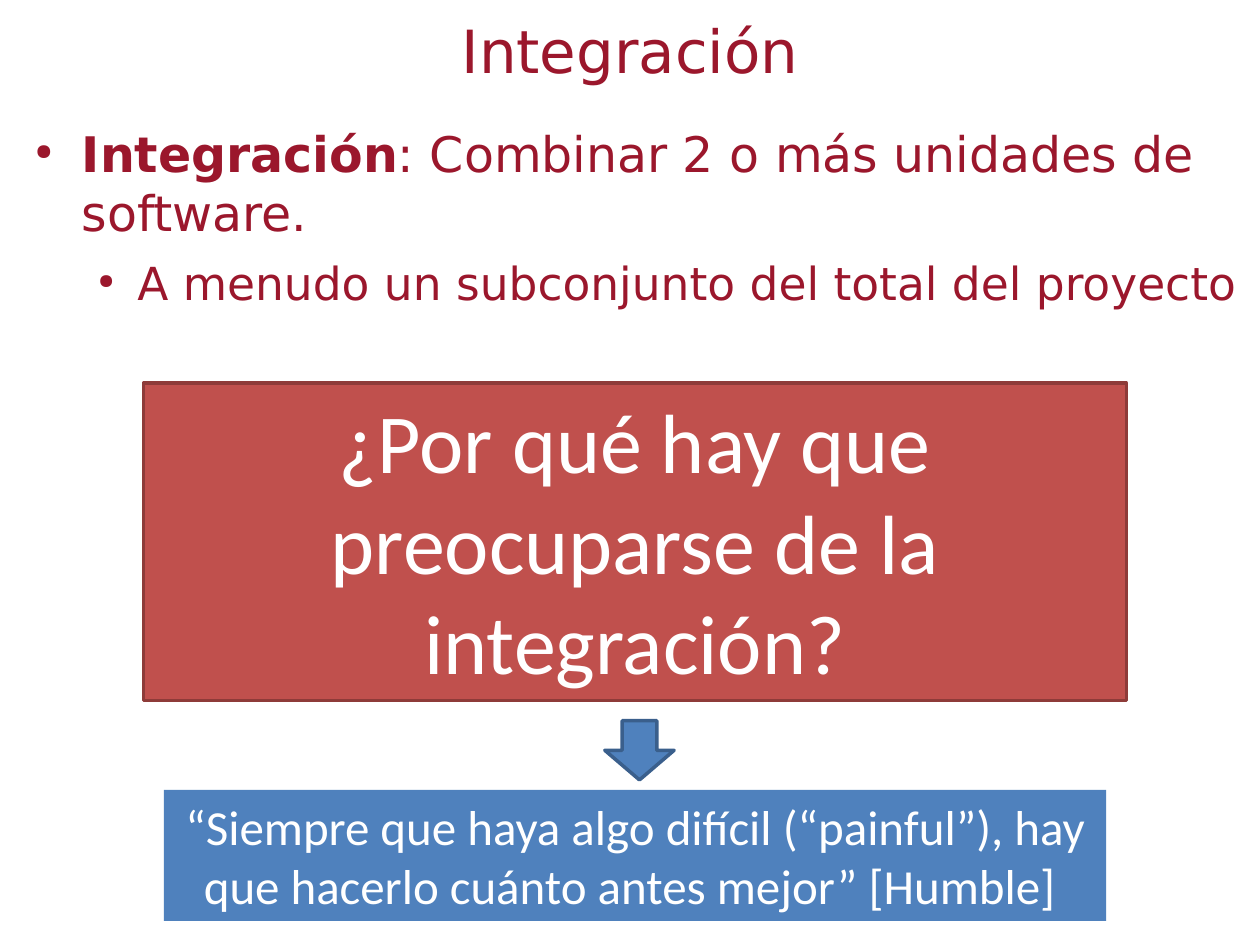
import pptx
import pptx.dml.color
import pptx.enum.shapes
import pptx.enum.text
import pptx.oxml.ns
import pptx.util
from lxml import etree
from pptx.util import Inches

COLORS = {"wine": "9B172C", "red": "C0504D", "dark_red": "8E3B39",
          "blue": "4F81BD", "dark_blue": "3A5F8C", "white": "FFFFFF"}
SHAPES = pptx.enum.shapes.MSO_SHAPE
ANCHORS = pptx.enum.text.MSO_ANCHOR
CENTER = pptx.enum.text.PP_ALIGN.CENTER


def rgb(name):
    """Return the named colour."""
    return pptx.dml.color.RGBColor.from_string(COLORS[name])


def add_run(paragraph, text, size, font, color, bold=False):
    """Append one formatted run to a paragraph."""
    run = paragraph.add_run()
    run.text = text
    run.font.size = pptx.util.Pt(size)
    run.font.name = font
    run.font.bold = bold
    run.font.color.rgb = rgb(color)


def add_text_area(slide, box, anchor):
    """Add a wrapping text box without insets and return its frame."""
    frame = slide.shapes.add_textbox(*map(Inches, box)).text_frame
    frame.word_wrap = True
    frame.vertical_anchor = anchor
    frame.margin_left = frame.margin_right = 0
    frame.margin_top = frame.margin_bottom = 0
    return frame


def format_bullet(paragraph, level, margin, hanging):
    """Give a paragraph a small wine bullet with a hanging indent."""
    paragraph.level = level
    paragraph.space_before = paragraph.space_after = pptx.util.Pt(4)
    properties = paragraph._p.get_or_add_pPr()
    properties.set("marL", str(Inches(margin)))
    properties.set("indent", str(-Inches(hanging)))
    qn = pptx.oxml.ns.qn
    bullet_color = etree.SubElement(properties, qn("a:buClr"))
    etree.SubElement(bullet_color, qn("a:srgbClr"), val=COLORS["wine"])
    etree.SubElement(properties, qn("a:buSzPct"), val="45000")
    etree.SubElement(properties, qn("a:buChar"), char="●")


def add_block(slide, kind, box, fill, line=None):
    """Add a filled shape with an optional outline."""
    block = slide.shapes.add_shape(kind, *map(Inches, box))
    block.shadow.inherit = False
    block.fill.solid()
    block.fill.fore_color.rgb = rgb(fill)
    if line:
        block.line.color.rgb = rgb(line)
        block.line.width = pptx.util.Pt(2)
    else:
        block.line.fill.background()
    return block


def add_message(slide, box, text, size, fill, line=None):
    """Add a rectangle with centred white text."""
    frame = add_block(slide, SHAPES.RECTANGLE, box, fill, line).text_frame
    frame.word_wrap = True
    frame.vertical_anchor = ANCHORS.TOP
    frame.auto_size = pptx.enum.text.MSO_AUTO_SIZE.SHAPE_TO_FIT_TEXT
    frame.paragraphs[0].alignment = CENTER
    add_run(frame.paragraphs[0], text, size, "Calibri", "white")


def main():
    """Build the slide about integration and save it."""
    deck = pptx.Presentation()
    deck.slide_width, deck.slide_height = Inches(10), Inches(7.5)
    slide = deck.slides.add_slide(deck.slide_layouts[6])

    title = add_text_area(slide, (0, 0.04, 10, 0.71), ANCHORS.MIDDLE).paragraphs[0]
    title.alignment = CENTER
    add_run(title, "Integración", 34, "DejaVu Sans", "wine")

    body = add_text_area(slide, (0.28, 0.98, 9.57, 2.14), ANCHORS.TOP)
    definition = body.paragraphs[0]
    format_bullet(definition, 0, 0.37, 0.37)
    add_run(definition, "Integración", 28, "DejaVu Sans", "wine", bold=True)
    add_run(definition, ": Combinar 2 o más unidades de software.", 28, "DejaVu Sans", "wine")
    detail = body.add_paragraph()
    format_bullet(detail, 1, 0.81, 0.31)
    add_run(detail, "A menudo un subconjunto del total del proyecto", 26, "DejaVu Sans", "wine")

    add_message(slide, (1.14, 3.04, 7.8, 2.52),
                "¿Por qué hay que preocuparse de la integración?", 48, "red", "dark_red")
    arrow = add_block(slide, SHAPES.RIGHT_ARROW, (4.84, 5.68, 0.47, 0.55), "blue", "dark_blue")
    arrow.rotation = 90
    add_message(slide, (1.3, 6.27, 7.48, 1.04),
                "“Siempre que haya algo difícil (“painful”), hay que hacerlo "
                "cuánto antes mejor” [Humble] ", 28, "blue")
    deck.save("out.pptx")


if __name__ == "__main__":
    main()
